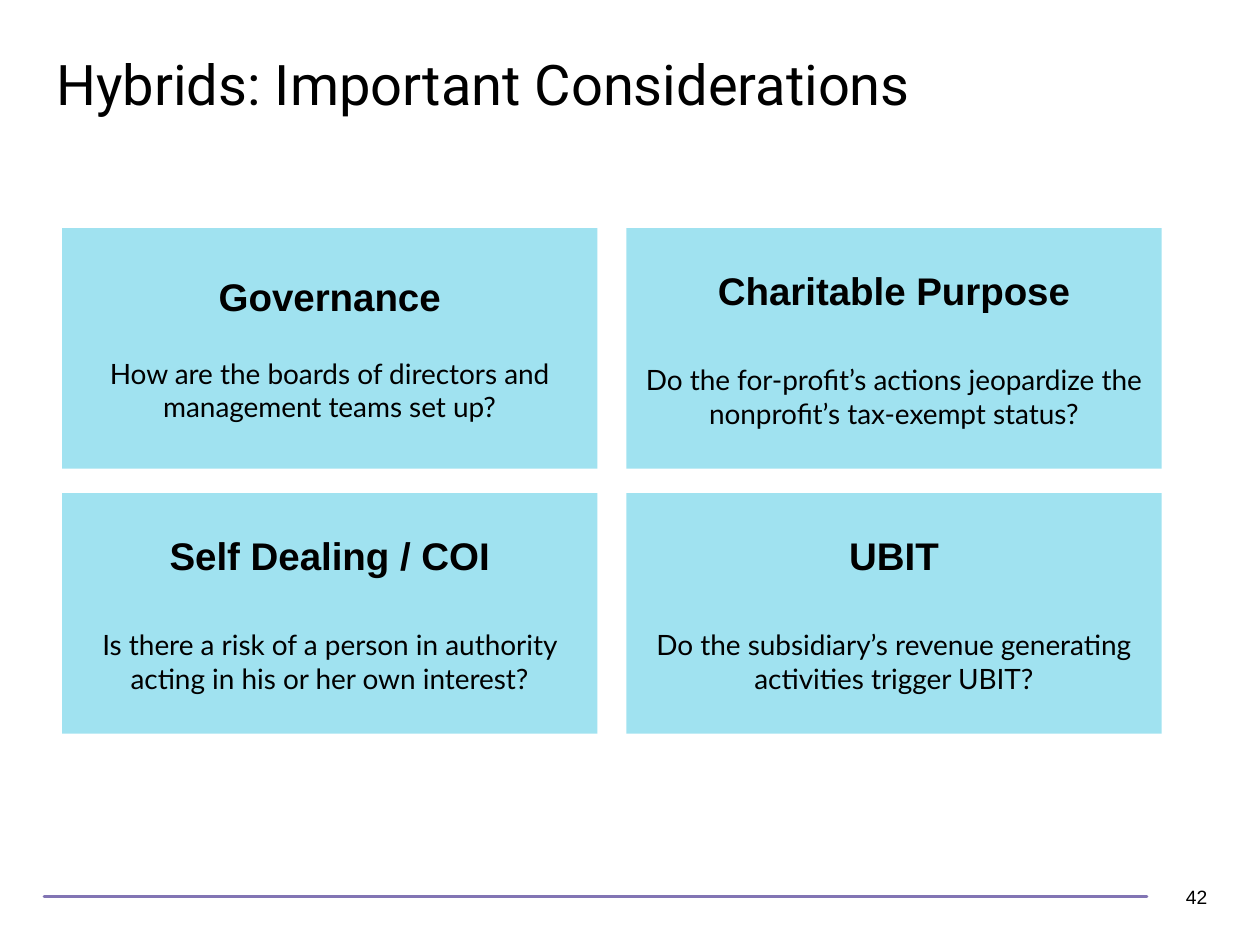
import lxml.etree
import pptx
import pptx.dml.color
import pptx.enum.shapes
import pptx.enum.text
import pptx.oxml.ns
import pptx.util

Cm, Pt = pptx.util.Cm, pptx.util.Pt
RGB = pptx.dml.color.RGBColor
ALIGN = pptx.enum.text.PP_ALIGN
ANCHOR = pptx.enum.text.MSO_ANCHOR
qn = pptx.oxml.ns.qn

BLACK = RGB(0x00, 0x00, 0x00)
CYAN = RGB(0x36, 0xC2, 0xE1)
PURPLE = RGB(0x82, 0x75, 0xB4)

TITLE = {"name": "Roboto", "size": Pt(32)}
HEAD = {"name": "Arial", "size": Pt(22), "bold": True}
BODY = {"name": "Lato", "size": Pt(16), "bold": False}
PAGE = {"name": "Arial", "size": Pt(11)}

CARDS = [
    ("Governance",
     "How are the boards of directors and management teams set up?", 21),
    ("Charitable Purpose",
     "Do the for-profit’s actions jeopardize the nonprofit’s tax-exempt status?", 28.5),
    ("Self Dealing / COI",
     "Is there a risk of a person in authority acting in his or her own interest?", 28.5),
    ("UBIT",
     "Do the subsidiary’s revenue generating activities trigger UBIT?", 28.5),
]


def write(para, text, font, **form):
    """Fill a paragraph and set its font and paragraph format."""
    para.text = text
    for key, value in form.items():
        setattr(para, key, value)
    for key, value in font.items():
        setattr(para.font, key, value)
    para.font.color.rgb = BLACK


def label(slide, box, text, font, anchor, **form):
    """Place one line of text in a box given in centimetres."""
    frame = slide.shapes.add_textbox(*map(Cm, box)).text_frame
    frame.word_wrap = True
    frame.vertical_anchor = anchor
    write(frame.paragraphs[0], text, font, **form)


def card(slide, box, head, body, gap):
    """Place a tinted card with a heading and a question."""
    shape = slide.shapes.add_shape(
        pptx.enum.shapes.MSO_SHAPE.RECTANGLE, *map(Cm, box))
    shape.shadow.inherit = False
    shape.line.fill.background()
    shape.fill.solid()
    shape.fill.fore_color.rgb = CYAN
    tint = shape._element.spPr.find(".//" + qn("a:srgbClr"))
    lxml.etree.SubElement(tint, qn("a:alpha"), val="47000")
    frame = shape.text_frame
    frame.word_wrap = True
    frame.vertical_anchor = ANCHOR.MIDDLE
    write(frame.paragraphs[0], head, HEAD, alignment=ALIGN.CENTER)
    write(frame.add_paragraph(), body, BODY,
          alignment=ALIGN.CENTER, space_before=Pt(gap))


def grid(slide, box, gaps):
    """Lay the cards out in two columns and two rows."""
    left, top, width, height = box
    wide, high = (width - gaps[0]) / 2, (height - gaps[1]) / 2
    for i, item in enumerate(CARDS):
        row, col = divmod(i, 2)
        spot = (left + col * (wide + gaps[0]), top + row * (high + gaps[1]))
        card(slide, (*spot, wide, high), *item)


def footer(slide, box, number):
    """Draw the rule and the page number at the foot of the slide."""
    left, top, width, height = box
    mid = top + height / 2
    rule = slide.shapes.add_connector(
        pptx.enum.shapes.MSO_CONNECTOR.STRAIGHT,
        *map(Cm, (left, mid, left + width - 1.47, mid)))
    rule.line.color.rgb = PURPLE
    rule.line.width = Pt(1.75)
    rule.line._get_or_add_ln().set("cap", "rnd")
    lxml.etree.SubElement(rule._element.spPr, qn("a:effectLst"))
    label(slide, (left + width - 2.08, top, 2.08, height), number, PAGE,
          ANCHOR.MIDDLE, alignment=ALIGN.RIGHT)


def main():
    """Build the slide and save it."""
    deck = pptx.Presentation()
    deck.slide_width, deck.slide_height = Cm(25.4), Cm(19.05)
    slide = deck.slides.add_slide(deck.slide_layouts[6])
    label(slide, (0.89, 1.02, 23.72, 2.06), "Hybrids: Important Considerations",
          TITLE, ANCHOR.TOP, line_spacing=0.9)
    grid(slide, (1.25, 4.6, 22.17, 10.19), (0.58, 0.49))
    footer(slide, (0.89, 17.56, 23.7, 1.02), "42")
    deck.save("out.pptx")


if __name__ == "__main__":
    main()
